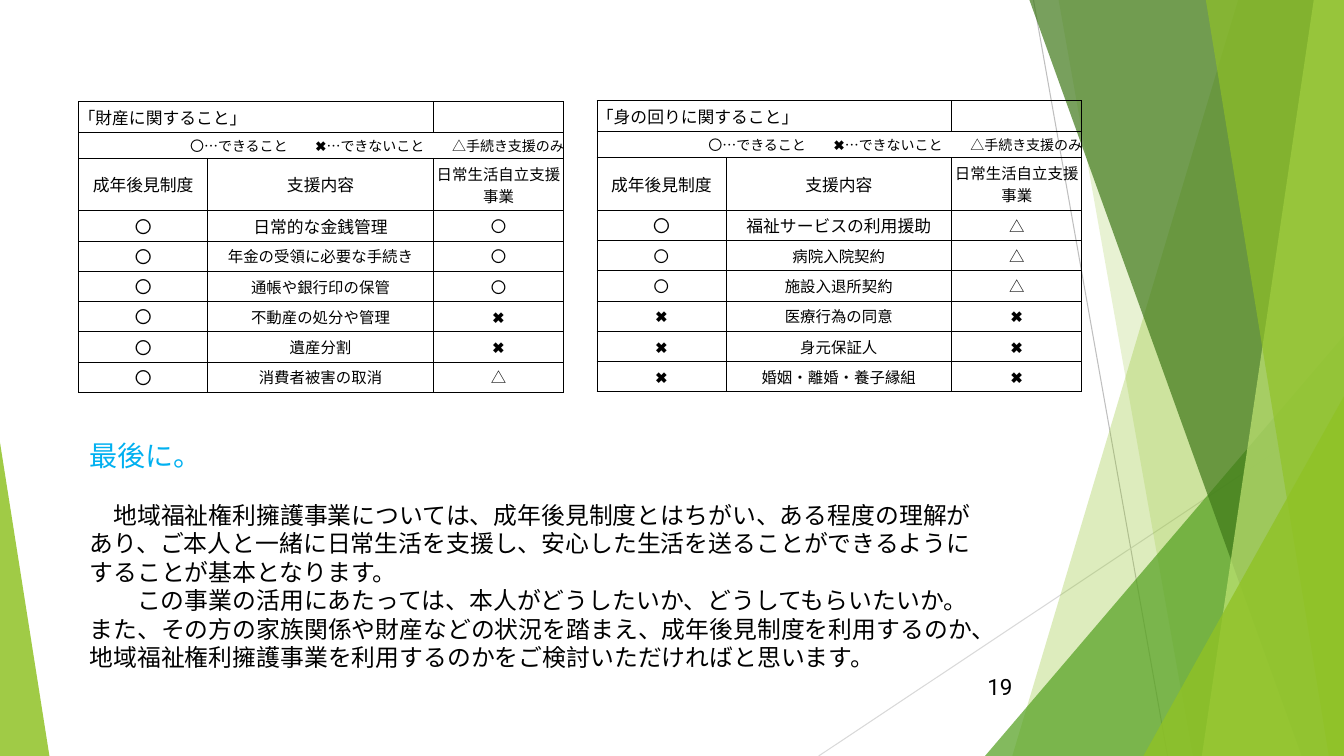
from lxml import etree
from pptx import Presentation
from pptx.dml.color import RGBColor
from pptx.enum.shapes import MSO_CONNECTOR, MSO_SHAPE
from pptx.enum.text import MSO_ANCHOR, PP_ALIGN
from pptx.oxml.ns import qn
from pptx.util import Inches, Pt

STRAIGHT = MSO_CONNECTOR.STRAIGHT
TRIANGLE = MSO_SHAPE.ISOSCELES_TRIANGLE
MIDDLE = MSO_ANCHOR.MIDDLE
LEFT, CENTER, RIGHT = PP_ALIGN.LEFT, PP_ALIGN.CENTER, PP_ALIGN.RIGHT

BLACK = RGBColor(0x00, 0x00, 0x00)
SKY_BLUE = RGBColor(0x00, 0xB0, 0xF0)
LIME = RGBColor(0x90, 0xC2, 0x26)
PALE_LIME = RGBColor(0xC0, 0xE4, 0x74)
LEAF = RGBColor(0x54, 0xA0, 0x21)
FOREST = RGBColor(0x3F, 0x78, 0x19)
GREY = RGBColor(0xBF, 0xBF, 0xBF)
LIGHT_GREY = RGBColor(0xD9, 0xD9, 0xD9)

TABLE_FONT = "Noto Sans CJK JP"
BODY_FONT = "Roboto"
SLIDE_W, SLIDE_H = 13.33, 7.5

COLUMN_WIDTHS = [1.28, 2.24, 1.29]
ROW_HEIGHTS = [0.3, 0.26, 0.52] + [0.3] * 6
LEGEND = "〇…できること　　✖…できないこと　　△手続き支援のみ"
HEADINGS = ("成年後見制度", "支援内容", "日常生活自立支援事業")

# Each support row: guardianship mark, support, daily-life mark, sizes of the first two
PROPERTY_ROWS = [
    ("〇", "日常的な金銭管理", "〇", 12, 12),
    ("〇", "年金の受領に必要な手続き", "〇", 12, 11),
    ("〇", "通帳や銀行印の保管", "〇", 12, 11),
    ("〇", "不動産の処分や管理", "✖", 12, 11),
    ("〇", "遺産分割", "✖", 12, 11),
    ("〇", "消費者被害の取消", "△", 12, 11),
]
PERSONAL_ROWS = [
    ("〇", "福祉サービスの利用援助", "△", 12, 12),
    ("〇", "病院入院契約", "△", 11, 11),
    ("〇", "施設入退所契約", "△", 11, 11),
    ("✖", "医療行為の同意", "✖", 11, 11),
    ("✖", "身元保証人", "✖", 11, 11),
    ("✖", "婚姻・離婚・養子縁組", "✖", 11, 11),
]

# Closing paragraphs with their first-line indent in characters
CLOSING_HEADING = "最後に。"
CLOSING = [
    ("地域福祉権利擁護事業については、成年後見制度とはちがい、ある程度の理解があり、"
     "ご本人と一緒に日常生活を支援し、安心した生活を送ることができるようにすることが基本となります。", 1),
    ("この事業の活用にあたっては、本人がどうしたいか、どうしてもらいたいか。", 2),
    ("また、その方の家族関係や財産などの状況を踏まえ、成年後見制度を利用するのか、"
     "地域福祉権利擁護事業を利用するのかをご検討いただければと思います。", 0),
]


def style_paragraph(paragraph, text, size, font_name, color=BLACK, align=LEFT):
    paragraph.text = text
    paragraph.alignment = align
    font = paragraph.font
    font.size, font.name, font.color.rgb = Pt(size), font_name, color


def paint(shape, color, opacity):
    """Flat fill with the given opacity in percent, no outline and no shadow."""
    shape.shadow.inherit = False
    shape.fill.solid()
    shape.fill.fore_color.rgb = color
    tint = shape._element.spPr.find(qn("a:solidFill")).find(qn("a:srgbClr"))
    etree.SubElement(tint, qn("a:alpha"), val=str(opacity * 1000))
    shape.line.fill.background()


def add_thin_line(slide, start, end, color):
    line = slide.shapes.add_connector(STRAIGHT, *map(Inches, start + end))
    line.line.color.rgb = color
    line.line.width = Pt(0.75)
    etree.SubElement(line._element.spPr, qn("a:effectLst"))


def add_blade(slide, top_x, bottom_x, color, opacity):
    """Full-height panel from a slanted edge to the right side of the slide."""
    outline = slide.shapes.build_freeform(Inches(top_x), 0)
    corners = [(SLIDE_W, 0), (SLIDE_W, SLIDE_H), (bottom_x, SLIDE_H)]
    outline.add_line_segments([(Inches(x), Inches(y)) for x, y in corners], close=True)
    paint(outline.convert_to_shape(), color, opacity)


def add_corner(slide, left, top, width, apex, color, opacity):
    """Right triangle standing on the bottom edge; apex 0 is left, 1 is right."""
    corner = slide.shapes.add_shape(TRIANGLE, Inches(left), Inches(top),
                                    Inches(width), Inches(SLIDE_H - top))
    corner.adjustments[0] = apex
    paint(corner, color, opacity)


def add_backdrop(slide):
    add_thin_line(slide, (10.25, 0), (11.58, SLIDE_H), GREY)
    add_thin_line(slide, (SLIDE_W, 4.03), (8.12, SLIDE_H), LIGHT_GREY)
    add_blade(slide, 12.28, 10.04, LIME, 30)
    add_blade(slide, 10.5, 11.83, LIME, 20)
    add_corner(slide, 9.77, 3.33, 3.56, 1, LEAF, 72)
    add_blade(slide, 10.21, 12.91, FOREST, 70)
    add_blade(slide, 13.03, 11.92, PALE_LIME, 70)
    add_blade(slide, 11.96, 13.18, LIME, 65)
    add_corner(slide, 11.34, 3.93, 1.99, 1, LIME, 80)
    add_corner(slide, 0, 4.39, 0.49, 0, LIME, 85)


def format_cell(cell):
    """Clear cell without margins, framed by thin black lines."""
    cell.margin_left = cell.margin_right = cell.margin_top = cell.margin_bottom = 0
    cell.vertical_anchor = MIDDLE
    properties = cell._tc.get_or_add_tcPr()
    for side in ("a:lnL", "a:lnR", "a:lnT", "a:lnB"):
        border = etree.SubElement(properties, qn(side), w=str(Pt(0.5)))
        ink = etree.SubElement(border, qn("a:solidFill"))
        etree.SubElement(ink, qn("a:srgbClr"), val=str(BLACK))
    cell.fill.background()


def add_support_table(slide, left, top, title, support_rows):
    table = slide.shapes.add_table(
        len(ROW_HEIGHTS), len(COLUMN_WIDTHS), Inches(left), Inches(top),
        Inches(sum(COLUMN_WIDTHS)), Inches(sum(ROW_HEIGHTS))).table
    table.first_row = table.horz_banding = False
    for column, width in zip(table.columns, COLUMN_WIDTHS):
        column.width = Inches(width)
    for row, height in zip(table.rows, ROW_HEIGHTS):
        row.height = Inches(height)
    for cell in table.iter_cells():
        format_cell(cell)

    def write(row, column, text, size, align=CENTER):
        paragraph = table.cell(row, column).text_frame.paragraphs[0]
        style_paragraph(paragraph, text, size, TABLE_FONT, align=align)

    # Title and legend
    table.cell(0, 0).merge(table.cell(0, 1))
    table.cell(1, 0).merge(table.cell(1, 2))
    write(0, 0, title, 12, LEFT)
    write(1, 0, LEGEND, 10, RIGHT)

    # Headings and support rows
    for row, (*texts, mark_size, support_size) in enumerate(
            [(*HEADINGS, 12, 12)] + support_rows, start=2):
        for column, (text, size) in enumerate(zip(texts, (mark_size, support_size, 11))):
            write(row, column, text, size)


def add_closing(slide, left, top, width, height):
    frame = slide.shapes.add_textbox(Inches(left), Inches(top),
                                     Inches(width), Inches(height)).text_frame
    frame.word_wrap = True
    heading = frame.paragraphs[0]
    style_paragraph(heading, CLOSING_HEADING, 20, BODY_FONT, SKY_BLUE)
    heading.line_spacing = Pt(24)
    heading.space_after = Pt(20.4)
    for text, indent in CLOSING:
        paragraph = frame.add_paragraph()
        style_paragraph(paragraph, text, 17, BODY_FONT)
        paragraph.line_spacing = Pt(20.4)
        paragraph._p.get_or_add_pPr().set("indent", str(Pt(17 * indent)))


def add_page_number(slide, left, top, width, height):
    frame = slide.shapes.add_textbox(Inches(left), Inches(top),
                                     Inches(width), Inches(height)).text_frame
    frame.word_wrap = True
    frame.vertical_anchor = MIDDLE
    style_paragraph(frame.paragraphs[0], "19", 16, BODY_FONT, align=RIGHT)


def main():
    deck = Presentation()
    deck.slide_width, deck.slide_height = Inches(SLIDE_W), Inches(SLIDE_H)
    slide = deck.slides.add_slide(deck.slide_layouts[6])
    add_backdrop(slide)
    add_support_table(slide, 5.92, 1, "「身の回りに関すること」", PERSONAL_ROWS)
    add_closing(slide, 0.79, 4.3, 9.14, 2.44)
    add_support_table(slide, 0.78, 1.01, "「財産に関すること」", PROPERTY_ROWS)
    add_page_number(slide, 9.39, 6.61, 0.75, 0.4)
    deck.save("out.pptx")


if __name__ == "__main__":
    main()
